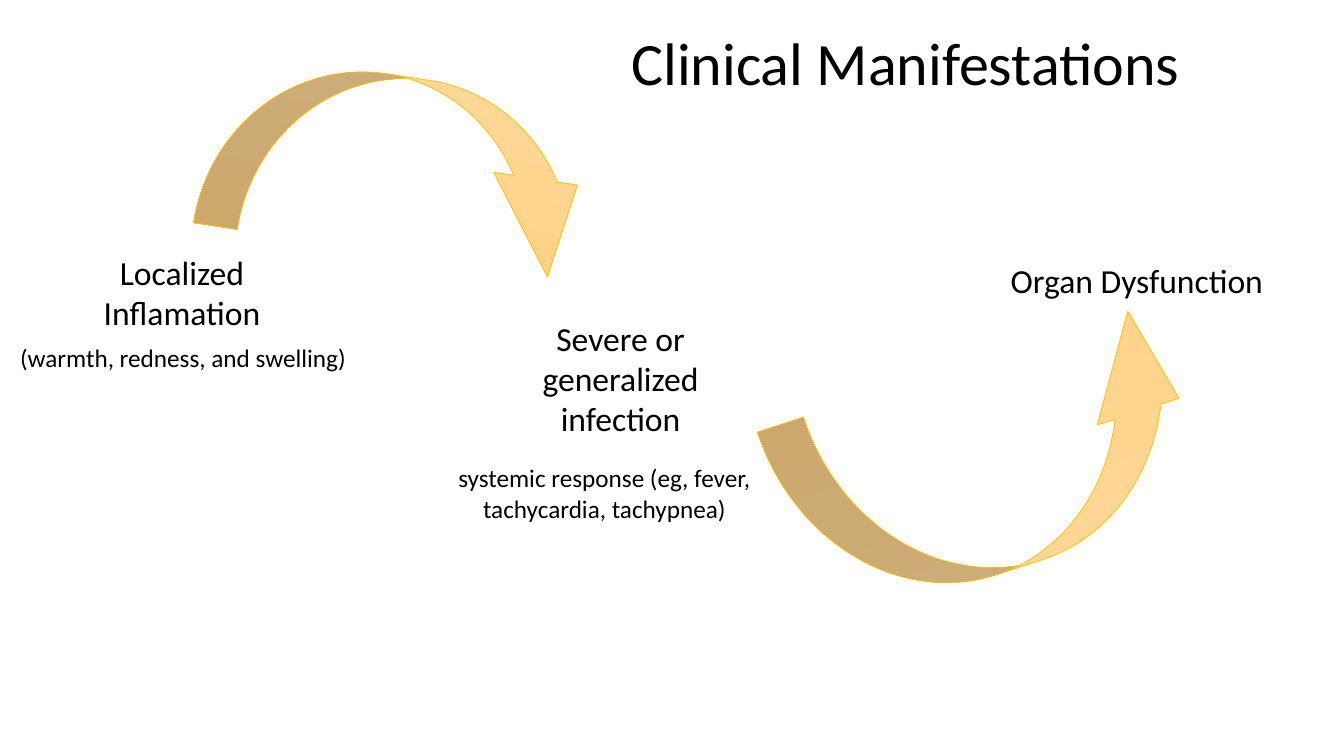
from copy import deepcopy

from pptx import Presentation
from pptx import util as u
from pptx.dml.color import RGBColor
from pptx.enum import shapes, text
from pptx.oxml.ns import qn

PX = 9144
BLACK = RGBColor(0x00, 0x00, 0x00)
WHITE = RGBColor(0xFF, 0xFF, 0xFF)
GOLD = RGBColor(0xFF, 0xC0, 0x00)
SAND = {
    0: RGBColor(0xFF, 0xDB, 0x9E),
    0.5: RGBColor(0xFF, 0xD5, 0x90),
    1: RGBColor(0xFF, 0xD0, 0x7C),
}


class ManifestationSlide:
    font = "Calibri"
    stage_size = 24
    detail_size = 18
    title_size = 42.9

    def __init__(self, deck):
        self.slide = deck.slides.add_slide(deck.slide_layouts[6])

    def box(self, frame):
        return [length * PX for length in frame]

    def label(self, shape, words, size, centred=True, **paragraph_format):
        frame = shape.text_frame
        frame.word_wrap = True
        paragraph = frame.paragraphs[0]
        paragraph.alignment = text.PP_ALIGN.CENTER if centred else text.PP_ALIGN.LEFT
        for name, value in paragraph_format.items():
            setattr(paragraph, name, value)
        run = paragraph.add_run()
        run.text = words
        for name, value in {"name": self.font, "size": u.Pt(size)}.items():
            setattr(run.font, name, value)
        run.font.color.rgb = BLACK
        return frame

    def stage(self, words, *frame):
        panel = self.slide.shapes.add_shape(
            shapes.MSO_SHAPE.RECTANGLE, *self.box(frame))
        panel.shadow.inherit = False
        panel.fill.solid()
        panel.fill.fore_color.rgb = WHITE
        panel.line.fill.background()
        body = self.label(panel, words, self.stage_size)
        body.vertical_anchor = text.MSO_ANCHOR.MIDDLE

    def detail(self, words, *frame, centred=True):
        note = self.slide.shapes.add_textbox(*self.box(frame))
        body = self.label(note, words, self.detail_size, centred)
        body.auto_size = text.MSO_AUTO_SIZE.SHAPE_TO_FIT_TEXT

    def title(self, words, *frame):
        heading = self.slide.shapes.add_textbox(*self.box(frame))
        body = self.label(heading, words, self.title_size, line_spacing=0.8)
        body.vertical_anchor = text.MSO_ANCHOR.MIDDLE

    def arrow(self, *frame, rotation, bends, flipped=False):
        arrow = self.slide.shapes.add_shape(
            shapes.MSO_SHAPE.CURVED_DOWN_ARROW, *self.box(frame))
        arrow.shadow.inherit = False
        arrow.rotation = rotation
        for index, bend in enumerate(bends):
            arrow.adjustments[index] = bend
        properties = arrow.element.spPr
        if flipped:
            properties.find(qn("a:xfrm")).set("flipH", "1")
        arrow.fill.gradient()
        arrow.fill.gradient_angle = 270
        stops = properties.find(".//" + qn("a:gsLst"))
        stops.insert(1, deepcopy(stops[0]))
        for stop, (position, colour) in zip(arrow.fill.gradient_stops, SAND.items()):
            stop.position = position
            stop.color.rgb = colour
        arrow.line.color.rgb = GOLD
        arrow.line.width = u.Pt(0.5)


def main():
    deck = Presentation()
    deck.slide_width, deck.slide_height = 1333 * PX, 750 * PX
    slide = ManifestationSlide(deck)
    slide.stage("Localized Inflamation", 78, 247, 205, 86)
    slide.detail("(warmth, redness, and swelling)", 10, 335, 362, 40, centred=False)
    slide.stage("Severe or generalized infection", 513, 321, 205, 108)
    slide.detail("systemic response (eg, fever, tachycardia, tachypnea)",
                 393, 454, 413, 71)
    slide.stage("Organ Dysfunction", 985, 224, 285, 108)
    slide.arrow(203, 77, 397, 175, rotation=8.7, bends=(0.25, 0.48, 0.54))
    slide.arrow(773, 357, 429, 208, rotation=161.9, bends=(0.23, 0.41, 0.47),
                flipped=True)
    slide.title("Clinical Manifestations", 488, 32, 820, 71)
    deck.save("out.pptx")


if __name__ == "__main__":
    main()
